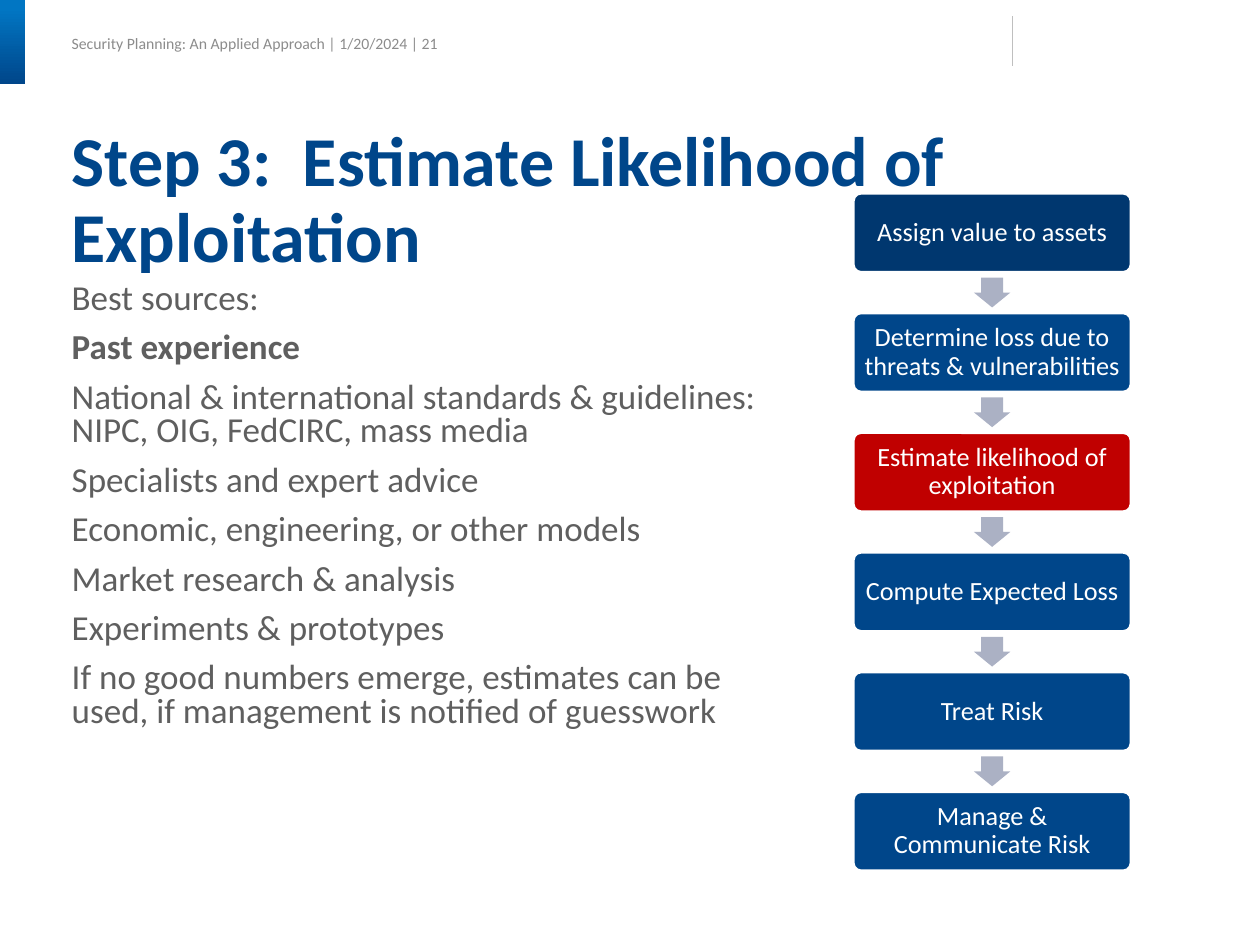
import pptx
import pptx.util
import pptx.dml.color
import pptx.enum.shapes
import pptx.enum.text
import pptx.oxml.ns
import lxml.etree

Pt = pptx.util.Pt
SHAPE = pptx.enum.shapes.MSO_SHAPE
ANCHOR = pptx.enum.text.MSO_ANCHOR
ALIGN = pptx.enum.text.PP_ALIGN

COLORS = {
    "blue": "00468A",
    "light_blue": "0176C3",
    "navy": "00376F",
    "red": "C00000",
    "arrow": "ABB1C4",
    "white": "FFFFFF",
    "text": "5F5F5F",
    "header": "8C8C8C",
    "rule": "BFBFBF",
}

SOURCES = [
    "Best sources:",
    "Past experience",
    "National & international standards & guidelines: NIPC, OIG, FedCIRC, mass media",
    "Specialists and expert advice",
    "Economic, engineering, or other models",
    "Market research & analysis",
    "Experiments & prototypes",
    "If no good numbers emerge, estimates can be used, if management is notified of guesswork",
]

STEPS = [
    ("Assign value to assets", "navy"),
    ("Determine loss due to threats & vulnerabilities", "blue"),
    ("Estimate likelihood of exploitation", "red"),
    ("Compute Expected Loss", "blue"),
    ("Treat Risk", "blue"),
    ("Manage & Communicate Risk", "blue"),
]


def rgb(name):
    return pptx.dml.color.RGBColor.from_string(COLORS[name])


def set_attrs(obj, values):
    for name, value in values.items():
        setattr(obj, name, value)


def set_frame(tf, margin=0, wrap=True, anchor=ANCHOR.TOP):
    set_attrs(tf, {
        "word_wrap": wrap,
        "auto_size": pptx.enum.text.MSO_AUTO_SIZE.NONE,
        "vertical_anchor": anchor,
        "margin_left": Pt(margin),
        "margin_right": Pt(margin),
        "margin_top": Pt(margin),
        "margin_bottom": Pt(margin),
    })


def set_paragraph(p, text, size, color, bold=False, **layout):
    p.text = text
    set_attrs(p, layout)
    set_attrs(p.font, {"name": "Calibri", "size": Pt(size), "bold": bold})
    p.font.color.rgb = rgb(color)


def add_filled(s, kind, box, color):
    sp = s.shapes.add_shape(kind, *map(Pt, box))
    sp.shadow.inherit = False
    sp.fill.solid()
    sp.fill.fore_color.rgb = rgb(color)
    sp.line.fill.background()
    return sp


def add_header(s, left, top, width, height):
    tab = add_filled(s, SHAPE.RECTANGLE, (0, 0, 14.4, 48.2), "blue")
    tab.fill.gradient()
    tab.fill.gradient_angle = 270
    for stop, position, color in zip(tab.fill.gradient_stops, (0.1, 1), ("light_blue", "blue")):
        stop.position = position
        stop.color.rgb = rgb(color)

    tf = s.shapes.add_textbox(Pt(left), Pt(top), Pt(width), Pt(height)).text_frame
    set_frame(tf, wrap=False, anchor=ANCHOR.MIDDLE)
    set_paragraph(tf.paragraphs[0], "Security Planning: An Applied Approach | 1/20/2024 | 21", 9, "header")

    rule = s.shapes.add_connector(
        pptx.enum.shapes.MSO_CONNECTOR.STRAIGHT, Pt(578.7), Pt(9.2), Pt(578.7), Pt(37.6))
    rule.line.color.rgb = rgb("rule")
    rule.line.width = Pt(0.75)
    lxml.etree.SubElement(rule._element.spPr, pptx.oxml.ns.qn("a:effectLst"))


def add_title(s, left, top, width, height):
    sp = s.shapes.title
    set_attrs(sp, {"left": Pt(left), "top": Pt(top), "width": Pt(width), "height": Pt(height)})
    set_frame(sp.text_frame)
    set_paragraph(sp.text_frame.paragraphs[0], "Step 3:  Estimate Likelihood of Exploitation",
                  40, "blue", True, alignment=ALIGN.LEFT, line_spacing=0.9)


def add_sources(s, left, top, width, height):
    tf = s.shapes.add_textbox(Pt(left), Pt(top), Pt(width), Pt(height)).text_frame
    set_frame(tf)
    for i, text in enumerate(SOURCES):
        p = tf.add_paragraph() if i else tf.paragraphs[0]
        set_paragraph(p, text, 20, "text", text == "Past experience",
                      line_spacing=0.8, space_before=Pt(9 if i else 0))


def add_steps(s, left, top, width, height):
    box_h, arrow_w, arrow_h = 45.6, 20.8, 17
    pitch = (height - box_h) / (len(STEPS) - 1)
    for i, (text, color) in enumerate(STEPS):
        y = top + i * pitch
        sp = add_filled(s, SHAPE.ROUNDED_RECTANGLE, (left, y, width, box_h), color)
        sp.adjustments[0] = 0.1
        sp.line.color.rgb = rgb("white")
        sp.line.width = Pt(2)
        set_frame(sp.text_frame, margin=4.3, anchor=ANCHOR.MIDDLE)
        set_paragraph(sp.text_frame.paragraphs[0], text, 15, "white",
                      alignment=ALIGN.CENTER, line_spacing=0.9)
        if i < len(STEPS) - 1:
            x = left + (width - arrow_w) / 2
            arrow_y = y + (pitch + box_h - arrow_h) / 2
            arrow = add_filled(s, SHAPE.DOWN_ARROW, (x, arrow_y, arrow_w, arrow_h), "arrow")
            arrow.adjustments[0] = 0.6
            arrow.adjustments[1] = 0.5


def main():
    prs = pptx.Presentation()
    prs.slide_width, prs.slide_height = Pt(720), Pt(540)
    s = prs.slides.add_slide(prs.slide_layouts[5])
    add_header(s, 41, 16.6, 210, 16.6)
    add_title(s, 41, 72, 642, 87)
    add_sources(s, 41, 162, 397, 340)
    add_steps(s, 487.4, 110.2, 159.1, 387.6)
    prs.save("out.pptx")


if __name__ == "__main__":
    main()
